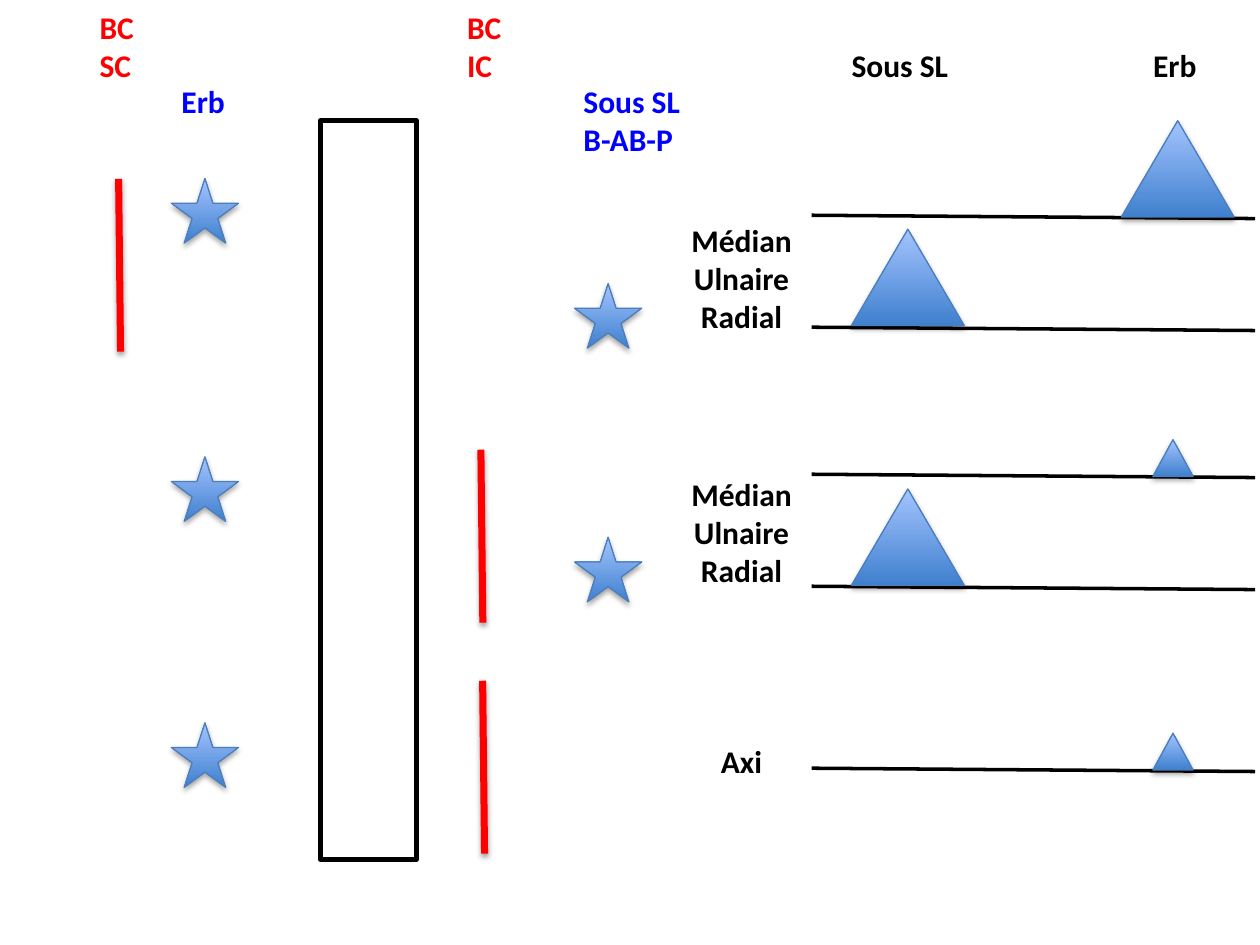
from dataclasses import dataclass

from lxml.etree import SubElement
from pptx import Presentation
from pptx.dml.color import RGBColor as RGB
from pptx.enum.shapes import MSO_CONNECTOR as CONN, MSO_SHAPE as SHAPE
from pptx.enum.text import MSO_AUTO_SIZE as FIT, PP_ALIGN as ALIGN
from pptx.oxml.ns import qn
from pptx.util import Pt


@dataclass(frozen=True)
class Theme:
    font: str = "Calibri"
    size: float = 18
    black: RGB = RGB(0, 0, 0)
    red: RGB = RGB(0xFF, 0, 0)
    blue: RGB = RGB(0, 0, 0xFF)
    outline: RGB = RGB(0x4B, 0x7E, 0xBC)
    gradient: tuple = (RGB(0x3F, 0x80, 0xCE), RGB(0xA4, 0xC4, 0xFF))


@dataclass(frozen=True)
class Symbol:
    kind: SHAPE
    left: float
    top: float
    width: float
    height: float


@dataclass(frozen=True)
class Stroke:
    x: float
    y: float
    dx: float
    dy: float
    color: RGB
    weight: float
    shadow: bool


@dataclass(frozen=True)
class Label:
    text: str
    left: float
    top: float
    width: float
    color: RGB
    align: ALIGN = ALIGN.LEFT


T = Theme()
LINE_HEIGHT = 21.8
ERB_X, SOUS_SL_X = 97.9, 328.3


def star(left: float, top: float) -> Symbol:
    return Symbol(SHAPE.STAR_5_POINT, left, top, 38.4, 37)


def peak(left: float, top: float, large: bool) -> Symbol:
    width, height = (64.4, 55) if large else (23, 21)
    return Symbol(SHAPE.ISOSCELES_TRIANGLE, left, top, width, height)


def block(x: float, y: float) -> Stroke:
    return Stroke(x, y, 1.1, 98.8, T.red, 4, True)


def baseline(y: float) -> Stroke:
    return Stroke(463.8, y, 253.4, 1.9, T.black, 2, False)


def nerves(top: float) -> Label:
    return Label("Médian\nUlnaire\nRadial", 387.4, top, 72.7, T.black, ALIGN.CENTER)


STROKES = [
    *(block(x, y) for x, y in ((67.8, 102.2), (274.8, 257), (275.8, 389))),
    *(baseline(y) for y in (123, 187, 271, 335, 439)),
]
SYMBOLS = [
    *(star(ERB_X, top) for top in (102, 261, 413)),
    *(star(SOUS_SL_X, top) for top in (162, 307)),
    *(peak(486.6, top, True) for top in (131, 279.4)),
    peak(640.8, 69, True),
    *(peak(658.8, top, False) for top in (251.2, 419)),
]
LABELS = [
    Label("BC\nSC", 49.8, 1, 34.6, T.red),
    Label("BC\nIC", 259.8, 1, 34.6, T.red),
    Label("Erb", 96.6, 43.2, 39.6, T.blue),
    Label("Sous SL\nB-AB-P", 326.3, 43.2, 70.6, T.blue),
    Label("Erb", 651.8, 23, 39.6, T.black),
    Label("Sous SL", 479.5, 23, 70.6, T.black),
    nerves(123),
    nerves(268),
    Label("Axi", 404.6, 420.6, 38.2, T.black, ALIGN.CENTER),
]


def add_effects(sp, opacity: int, distance: float) -> None:
    """Replace the theme's effects; an opacity of 0 leaves no shadow."""
    props = sp._element.spPr
    for old in props.findall(qn("a:effectLst")):
        props.remove(old)
    effects = SubElement(props, qn("a:effectLst"))
    if opacity:
        shadow = SubElement(effects, qn("a:outerShdw"), blurRad=str(Pt(3.1)),
                            dist=str(Pt(distance)), dir="5400000", rotWithShape="0")
        color = SubElement(shadow, qn("a:srgbClr"), val=str(T.black))
        SubElement(color, qn("a:alpha"), val=str(opacity * 1000))


def draw_frame(shapes) -> None:
    sp = shapes.add_shape(SHAPE.RECTANGLE, Pt(183), Pt(69), Pt(55), Pt(422))
    sp.fill.background()
    sp.line.color.rgb = T.black
    sp.line.width = Pt(3)
    sp.shadow.inherit = False


def draw_stroke(shapes, s: Stroke) -> None:
    line = shapes.add_connector(CONN.STRAIGHT, Pt(s.x), Pt(s.y),
                                Pt(s.x + s.dx), Pt(s.y + s.dy))
    line.line.color.rgb = s.color
    line.line.width = Pt(s.weight)
    add_effects(line, 38 if s.shadow else 0, 1.6)


def draw_symbol(shapes, s: Symbol) -> None:
    sp = shapes.add_shape(s.kind, Pt(s.left), Pt(s.top), Pt(s.width), Pt(s.height))
    sp.fill.gradient()
    sp.fill.gradient_angle = 90
    for stop, color, position in zip(sp.fill.gradient_stops, T.gradient, (0, 1)):
        stop.color.rgb = color
        stop.position = position
    sp.line.color.rgb = T.outline
    sp.line.width = Pt(0.75)
    add_effects(sp, 35, 1.8)


def draw_label(shapes, label: Label) -> None:
    height = 7.2 + LINE_HEIGHT * len(label.text.split("\n"))
    sp = shapes.add_textbox(Pt(label.left), Pt(label.top), Pt(label.width), Pt(height))
    tf = sp.text_frame
    tf.text = label.text
    tf.word_wrap = False
    tf.auto_size = FIT.SHAPE_TO_FIT_TEXT
    for p in tf.paragraphs:
        p.alignment = label.align
        for r in p.runs:
            r.font.name = T.font
            r.font.size = Pt(T.size)
            r.font.bold = True
            r.font.color.rgb = label.color


def main() -> None:
    prs = Presentation()
    prs.slide_width, prs.slide_height = Pt(720), Pt(540)
    shapes = prs.slides.add_slide(prs.slide_layouts[6]).shapes
    draw_frame(shapes)
    for stroke in STROKES:
        draw_stroke(shapes, stroke)
    for symbol in SYMBOLS:
        draw_symbol(shapes, symbol)
    for label in LABELS:
        draw_label(shapes, label)
    prs.save("out.pptx")


if __name__ == "__main__":
    main()
